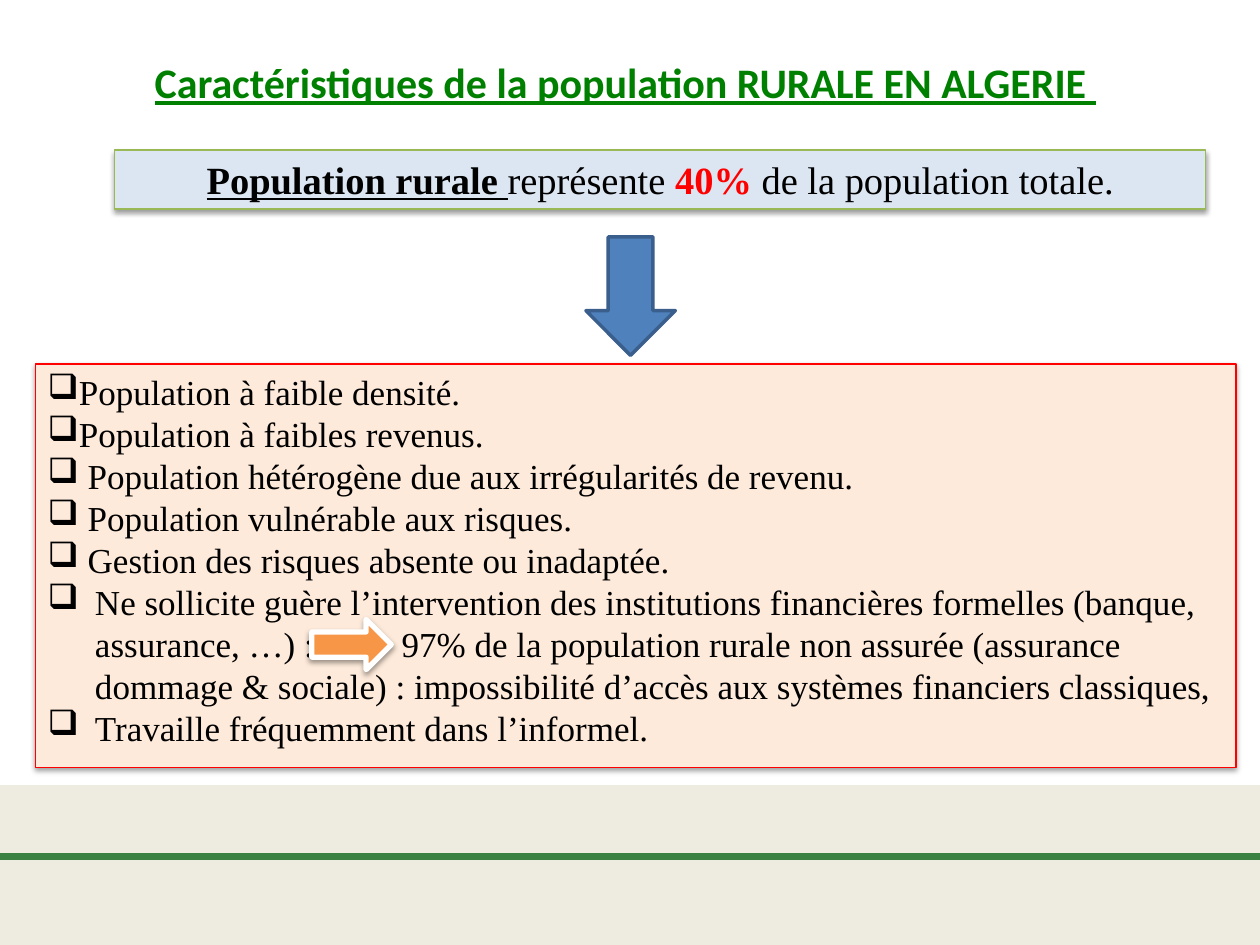
from dataclasses import dataclass
from lxml.etree import SubElement as Sub
from pptx import Presentation
from pptx.dml.color import RGBColor as Rgb
from pptx.enum.shapes import MSO_CONNECTOR as Link, MSO_SHAPE as Kind
from pptx.enum.text import PP_ALIGN as Align
from pptx.oxml.ns import qn
from pptx.util import Pt


@dataclass(frozen=True)
class Theme:
    back: str = "EEECE1"
    white: str = "FFFFFF"
    ink: str = "000000"
    red: str = "FF0000"
    title: str = "008000"
    rule: str = "3A8241"
    pale: str = "DCE6F2"
    olive: str = "98B955"
    peach: str = "FDEADA"
    blue: str = "4F81BD"
    navy: str = "3A5F8C"
    orange: str = "F79646"
    sans: str = "Calibri"
    serif: str = "Times New Roman"
    head: int = 24
    lead: int = 22
    body: int = 20


class Deck:
    def __init__(self, theme):
        self.theme = theme
        self.file = Presentation()
        self.file.slide_width, self.file.slide_height = Pt(720), Pt(540)
        self.slide = self.file.slides.add_slide(self.file.slide_layouts[6])
        fill = self.slide.background.fill
        fill.solid()
        fill.fore_color.rgb = Rgb.from_string(theme.back)

    def shape(self, kind, box, fill, line=None, width=0.75, shade=False, turn=0):
        item = self.slide.shapes.add_shape(kind, *map(Pt, box))
        item.shadow.inherit = False
        item.rotation = turn
        item.fill.solid()
        item.fill.fore_color.rgb = Rgb.from_string(fill)
        if line:
            item.line.color.rgb = Rgb.from_string(line)
            item.line.width = Pt(width)
        else:
            item.line.fill.background()
        if shade:
            self.shade(item)
        return item

    def shade(self, item):
        glow = item._element.spPr.find(qn("a:effectLst"))
        cast = Sub(glow, qn("a:outerShdw"), blurRad=str(Pt(3.1)),
                   dist=str(Pt(1.6)), dir="5400000", rotWithShape="0")
        tint = Sub(cast, qn("a:srgbClr"), val=self.theme.ink)
        Sub(tint, qn("a:alpha"), val="38000")

    def label(self, box):
        return self.slide.shapes.add_textbox(*map(Pt, box))

    def rule(self, y, color, width):
        line = self.slide.shapes.add_connector(Link.STRAIGHT, 0, Pt(y), Pt(720), Pt(y))
        line.line.color.rgb = Rgb.from_string(color)
        line.line.width = Pt(width)
        Sub(line._element.spPr, qn("a:effectLst"))

    def frame(self, item):
        frame = item.text_frame
        frame.word_wrap = True
        frame.vertical_anchor = 1
        return frame

    def run(self, para, text, size, font, color, bold=False, under=False, gap=0):
        run = para.add_run()
        run.text = text
        face = run.font
        face.size, face.name = Pt(size), font
        face.bold, face.underline = bold, under
        face.color.rgb = Rgb.from_string(color)
        if gap:
            run._r.get_or_add_rPr().set("spc", str(gap * 100))

    def bullet(self, para, mark, hang):
        para.alignment = Align.LEFT
        props = para._p.get_or_add_pPr()
        props.set("marL", str(Pt(hang)))
        props.set("indent", str(-Pt(hang)))
        Sub(props, qn("a:buChar"), char=mark)


def main():
    look = Theme()
    deck = Deck(look)
    deck.shape(Kind.RECTANGLE, (0, 0, 720, 448.6), look.white)

    lead = deck.shape(Kind.RECTANGLE, (65.5, 85.7, 623.5, 33.8),
                      look.pale, look.olive, shade=True)
    para = deck.frame(lead).paragraphs[0]
    para.alignment = Align.CENTER
    for text, color, bold, under in (
        ("Population rurale ", look.ink, True, True),
        ("représente ", look.ink, False, False),
        ("40% ", look.red, True, False),
        ("de la population totale.", look.ink, False, False),
    ):
        deck.run(para, text, look.lead, look.serif, color, bold, under)

    traits = deck.shape(Kind.RECTANGLE, (20.2, 208.1, 686.2, 230.4),
                        look.peach, look.red, shade=True)
    frame = deck.frame(traits)
    items = (
        (0, "Population à faible densité."),
        (0, "Population à faibles revenus."),
        (0, " Population hétérogène due aux irrégularités de revenu."),
        (0, " Population vulnérable aux risques."),
        (0, " Gestion des risques absente ou inadaptée."),
        (27, "Ne sollicite guère l’intervention des institutions financières "
             "formelles (banque, assurance, …) :",
         "97% de la population rurale non assurée (assurance dommage & sociale) : "
         "impossibilité d’accès aux systèmes financiers classiques,"),
        (27, "Travaille fréquemment dans l’informel."),
    )
    for row, (hang, text, *rest) in enumerate(items):
        para = frame.add_paragraph() if row else frame.paragraphs[0]
        deck.bullet(para, "❑", hang)
        deck.run(para, text, look.body, look.serif, look.ink)
        for more in rest:
            deck.run(para, " ", look.body, look.serif, look.ink, gap=45)
            deck.run(para, more, look.body, look.serif, look.ink)

    deck.shape(Kind.DOWN_ARROW, (334.8, 135.4, 51.1, 67.7), look.blue, look.navy, 2)

    title = deck.label((8.6, 28.8, 697.7, 58.3))
    para = deck.frame(title).paragraphs[0]
    para.alignment = Align.CENTER
    deck.run(para, "Caractéristiques de la population RURALE EN ALGERIE ",
             look.head, look.sans, look.title, True, True)

    deck.rule(489.6, look.rule, 4)
    deck.shape(Kind.DOWN_ARROW, (186.5, 345.6, 28.8, 45.4), look.orange,
               look.white, 3, shade=True, turn=270)
    deck.file.save("out.pptx")


if __name__ == "__main__":
    main()
